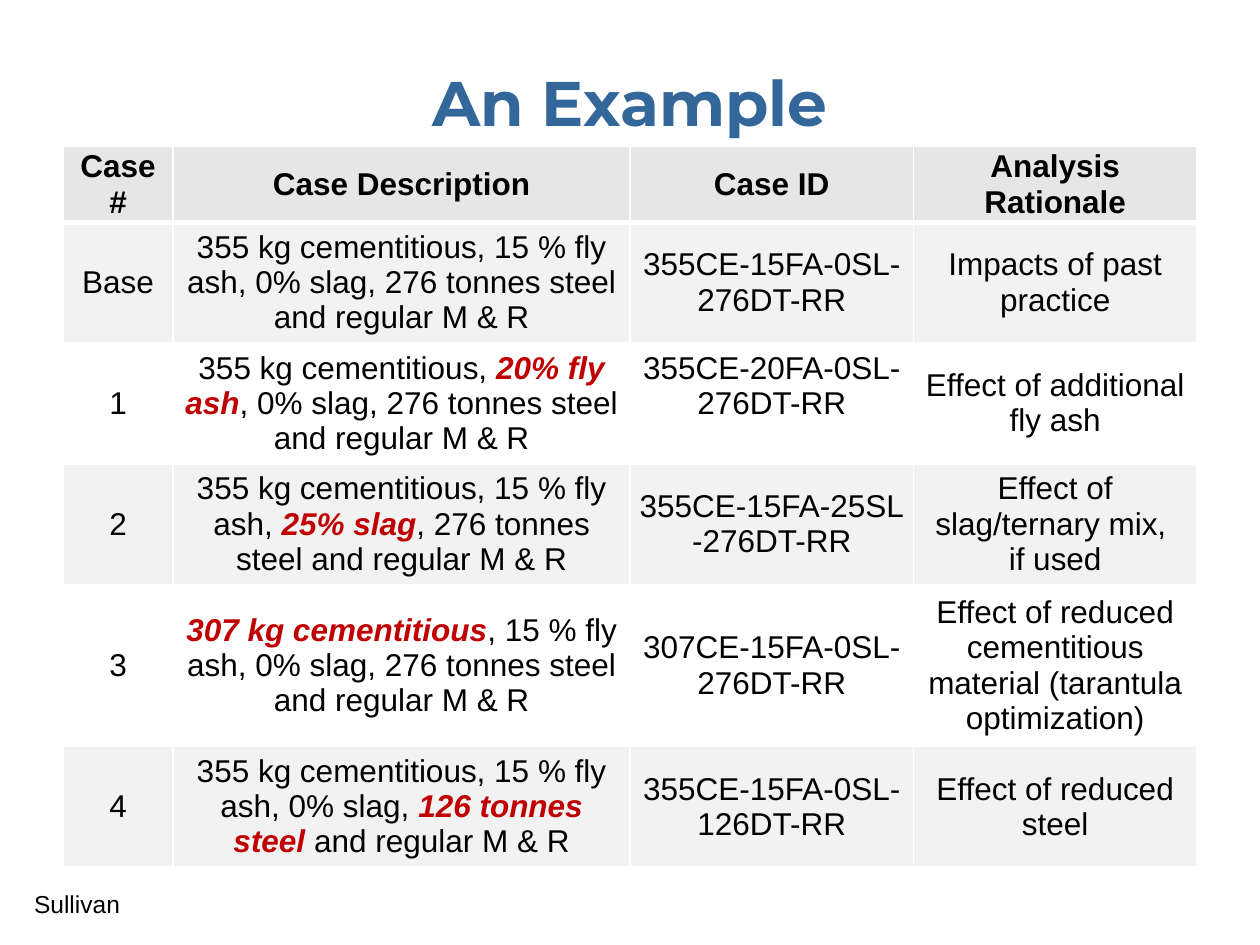
from lxml import etree
from pptx import Presentation
from pptx import util as u
from pptx.dml.color import RGBColor
from pptx.enum import text
from pptx.oxml import ns

COLORS = {"title": "336699", "text": "000000", "accent": "C00000",
          "header": "E6E6E6", "band": "F2F2F2", "white": "FFFFFF"}

# Asterisks enclose the part of a case that changes
ROWS = [
    ["Case #", "Case Description", "Case ID", "Analysis Rationale"],
    ["Base", "355 kg cementitious, 15 % fly ash, 0% slag, 276 tonnes steel and regular M & R",
     "355CE-15FA-0SL-276DT-RR", "Impacts of past practice"],
    ["1", "355 kg cementitious, *20% fly ash*, 0% slag, 276 tonnes steel and regular M & R",
     "355CE-20FA-0SL-276DT-RR", "Effect of additional fly ash"],
    ["2", "355 kg cementitious, 15 % fly ash, *25% slag*, 276 tonnes steel and regular M & R",
     "355CE-15FA-25SL-276DT-RR", "Effect of slag/ternary mix, \nif used"],
    ["3", "*307 kg cementitious*, 15 % fly ash, 0% slag, 276 tonnes steel and regular M & R",
     "307CE-15FA-0SL-276DT-RR",
     "Effect of reduced cementitious material (tarantula optimization)"],
    ["4", "355 kg cementitious, 15 % fly ash, 0% slag, *126 tonnes steel *and regular M & R",
     "355CE-15FA-0SL-126DT-RR", "Effect of reduced steel"],
]
COL_WIDTHS = [63, 261, 162, 162]
ROW_HEIGHTS = [40, 69, 69, 69, 92.5, 69]


def rgb(name):
    return RGBColor.from_string(COLORS[name])


class Deck:
    body_font, title_font = "Arial", "Montserrat"

    def __init__(self, width, height):
        self.prs = Presentation()
        self.prs.slide_width, self.prs.slide_height = u.Pt(width), u.Pt(height)
        self.s = self.prs.slides.add_slide(self.prs.slide_layouts[6])

    def set_text(self, tf, content, size, font, color="text", bold=False, align=None):
        for i, line in enumerate(content.split("\n")):
            p = tf.paragraphs[0] if i == 0 else tf.add_paragraph()
            p.alignment = align
            p.font.size, p.font.name = u.Pt(size), font
            p.font.bold = bold
            p.font.color.rgb = rgb(color)
            for j, part in enumerate(line.split("*")):
                if not part:
                    continue
                r = p.add_run()
                r.text = part
                if j % 2:
                    r.font.bold = r.font.italic = True
                    r.font.color.rgb = rgb("accent")

    def text_box(self, x, y, w, h, content, size, font, wrap=True, **style):
        tf = self.s.shapes.add_textbox(u.Pt(x), u.Pt(y), u.Pt(w), u.Pt(h)).text_frame
        tf.word_wrap = wrap
        tf.vertical_anchor = text.MSO_ANCHOR.MIDDLE
        self.set_text(tf, content, size, font, **style)

    def borders(self, cell, bottom):
        tc_pr = cell._tc.get_or_add_tcPr()
        for side, width in (("L", 1), ("R", 1), ("T", 1), ("B", bottom)):
            ln = etree.SubElement(tc_pr, ns.qn(f"a:ln{side}"), w=str(u.Pt(width)))
            fill = etree.SubElement(ln, ns.qn("a:solidFill"))
            etree.SubElement(fill, ns.qn("a:srgbClr"), val=COLORS["white"])

    def table(self, x, y, rows, widths, heights, size):
        frame = self.s.shapes.add_table(len(rows), len(widths), u.Pt(x), u.Pt(y),
                                        u.Pt(sum(widths)), u.Pt(sum(heights)))
        tbl = frame.table
        tbl.first_row = tbl.horz_banding = False
        for col, width in zip(tbl.columns, widths):
            col.width = u.Pt(width)
        for i, (row, height) in enumerate(zip(rows, heights)):
            tbl.rows[i].height = u.Pt(height)
            fill = "header" if i == 0 else "band" if i % 2 else "white"
            for j, content in enumerate(row):
                cell = tbl.cell(i, j)
                cell.margin_left = cell.margin_right = u.Pt(5)
                cell.margin_top = cell.margin_bottom = 0
                cell.vertical_anchor = text.MSO_ANCHOR.MIDDLE
                self.borders(cell, 3 if i == 0 else 1)
                cell.fill.solid()
                cell.fill.fore_color.rgb = rgb(fill)
                self.set_text(cell.text_frame, content, size, self.body_font,
                              bold=i == 0, align=text.PP_ALIGN.CENTER)
        return tbl


def main():
    deck = Deck(720, 540)

    # Title
    deck.text_box(36, 21.6, 648, 72.7, "An Example", 36, deck.title_font,
                  color="title", bold=True, align=text.PP_ALIGN.CENTER)

    # Case table; the ID of case 1 sits half a line above the middle
    tbl = deck.table(36, 83.8, ROWS, COL_WIDTHS, ROW_HEIGHTS, 18)
    tbl.cell(2, 2).margin_bottom = u.Pt(20)

    # Credit
    deck.text_box(12.4, 504, 64, 24.5, "Sullivan", 14, deck.body_font, wrap=False)

    deck.prs.save("out.pptx")


if __name__ == "__main__":
    main()
